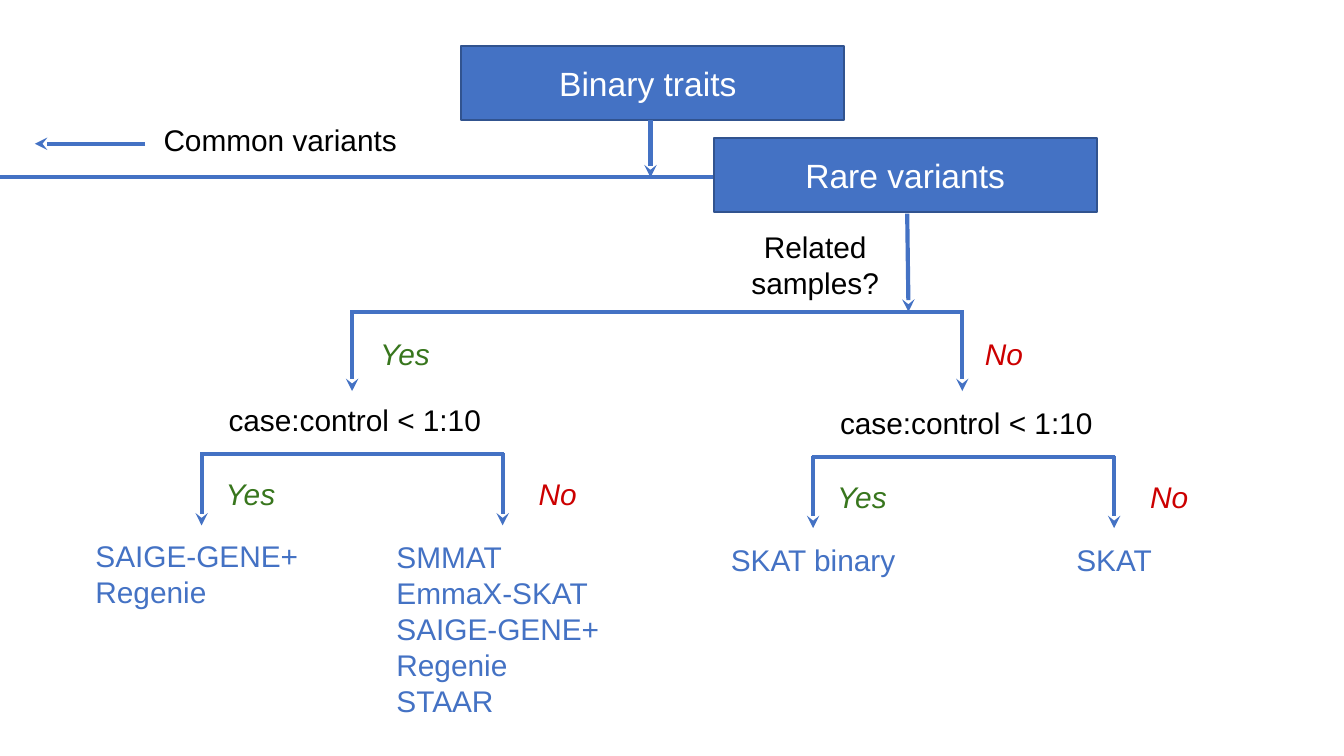
import pptx
import pptx.util
import pptx.dml.color
import pptx.enum.shapes
import pptx.enum.text
import pptx.oxml.ns
from lxml import etree

Inches = pptx.util.Inches
Pt = pptx.util.Pt
ALIGN = pptx.enum.text.PP_ALIGN
ANCHOR = pptx.enum.text.MSO_ANCHOR

COLORS = {
    "blue": "4472C4",
    "outline": "31538F",
    "white": "FFFFFF",
    "black": "000000",
    "Yes": "38761D",
    "No": "CC0000",
}


def rgb(name):
    return pptx.dml.color.RGBColor.from_string(COLORS[name])


def write(shape, text, color, size=16, align=ALIGN.CENTER, anchor=ANCHOR.TOP,
          inset=(0.07, 0.04), italic=False):
    frame = shape.text_frame
    frame.word_wrap = True
    frame.vertical_anchor = anchor
    frame.margin_left = frame.margin_right = Inches(inset[0])
    frame.margin_top = frame.margin_bottom = Inches(inset[1])
    frame.text = text
    for paragraph in frame.paragraphs:
        paragraph.alignment = align
        paragraph.font.name = "Arial"
        paragraph.font.size = Pt(size)
        paragraph.font.italic = italic
        paragraph.font.color.rgb = rgb(color)


def add_stage(slide, left, top, text):
    stage = slide.shapes.add_shape(
        pptx.enum.shapes.MSO_SHAPE.RECTANGLE,
        Inches(left), Inches(top), Inches(2.85), Inches(0.55))
    stage.shadow.inherit = False
    stage.fill.solid()
    stage.fill.fore_color.rgb = rgb("blue")
    stage.line.color.rgb = rgb("outline")
    stage.line.width = Pt(1)
    write(stage, text, "white", size=18, anchor=ANCHOR.MIDDLE)


def add_label(slide, left, top, width, height, text, color="black", **style):
    label = slide.shapes.add_textbox(
        Inches(left), Inches(top), Inches(width), Inches(height))
    write(label, text, color, **style)


def add_answer(slide, left, top, answer):
    add_label(slide, left, top, 0.64, 0.47, answer, answer,
              align=ALIGN.LEFT, inset=(0.1, 0.1), italic=True)


def add_methods(slide, left, top, methods, align=ALIGN.CENTER):
    height = 0.08 + 0.27 * len(methods.splitlines())
    add_label(slide, left, top, 1.72, height, methods, "blue", align=align)


def add_line(slide, x1, y1, x2, y2, arrow=False):
    line = slide.shapes.add_connector(
        pptx.enum.shapes.MSO_CONNECTOR.STRAIGHT,
        Inches(x1), Inches(y1), Inches(x2), Inches(y2))
    line.line.color.rgb = rgb("blue")
    line.line.width = Pt(2.25)
    if arrow:
        etree.SubElement(line.line._get_or_add_ln(),
                         pptx.oxml.ns.qn("a:tailEnd"), type="stealth")
    etree.SubElement(line._element.spPr, pptx.oxml.ns.qn("a:effectLst"))


def add_fork(slide, left, right, top, bottom):
    add_line(slide, left - 0.01, top, right + 0.01, top)
    for x in (left, right):
        add_line(slide, x, top - 0.01, x, bottom, arrow=True)


def add_ratio_test(slide, left, top):
    add_label(slide, left, top, 2.32, 0.35, "case:control < 1:10")
    add_fork(slide, left + 0.02, left + 2.26, top + 0.43, top + 0.96)
    add_answer(slide, left + 0.1, top + 0.49, "Yes")
    add_answer(slide, left + 2.43, top + 0.49, "No")


def main():
    deck = pptx.Presentation()
    deck.slide_width = Inches(10)
    deck.slide_height = deck.slide_width * 9 // 16
    slide = deck.slides.add_slide(deck.slide_layouts[6])

    add_stage(slide, 3.43, 0.34, "Binary traits ")
    add_line(slide, -0.14, 1.32, 5.31, 1.32)
    add_line(slide, 4.84, 0.89, 4.84, 1.32, arrow=True)
    add_line(slide, 1.08, 1.07, 0.26, 1.07, arrow=True)
    add_label(slide, 0.66, 0.83, 2.85, 0.42, "Common variants", anchor=ANCHOR.MIDDLE)

    add_stage(slide, 5.31, 1.03, "Rare variants")
    add_line(slide, 6.75, 1.59, 6.76, 2.32, arrow=True)
    add_label(slide, 5.32, 1.66, 1.49, 0.61, "Related samples?")
    add_fork(slide, 2.62, 7.16, 2.32, 2.91)
    add_answer(slide, 2.73, 2.4, "Yes")
    add_answer(slide, 7.23, 2.4, "No")

    add_ratio_test(slide, 1.48, 2.95)
    add_methods(slide, 0.64, 3.96, "SAIGE-GENE+\nRegenie", ALIGN.LEFT)
    add_methods(slide, 2.88, 3.97,
                "SMMAT\vEmmaX-SKAT\vSAIGE-GENE+\nRegenie\nSTAAR", ALIGN.LEFT)

    add_ratio_test(slide, 6.03, 2.97)
    add_methods(slide, 5.19, 3.99, "SKAT binary")
    add_methods(slide, 7.43, 3.99, "SKAT")

    deck.save("out.pptx")


if __name__ == "__main__":
    main()
